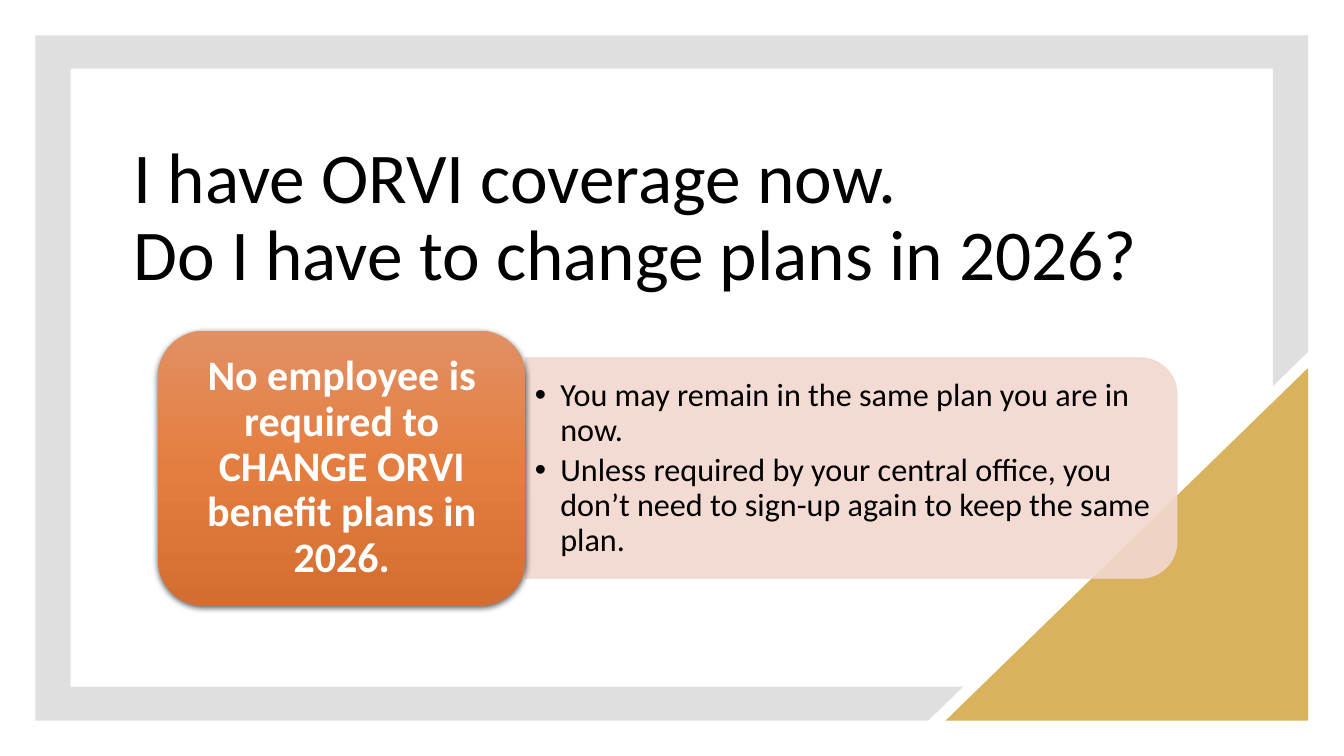
from copy import deepcopy
from dataclasses import dataclass

from lxml import etree
from pptx import Presentation
from pptx.dml.color import RGBColor
from pptx.enum.shapes import MSO_SHAPE
from pptx.enum.text import MSO_ANCHOR, MSO_AUTO_SIZE, PP_ALIGN
from pptx.oxml.ns import qn
from pptx.util import Cm, Pt

LEFT, CENTER = PP_ALIGN.LEFT, PP_ALIGN.CENTER
MIDDLE, NO_AUTOFIT = MSO_ANCHOR.MIDDLE, MSO_AUTO_SIZE.NONE
TRIANGLE = MSO_SHAPE.RIGHT_TRIANGLE
ROUNDED, ROUNDED_TOP = MSO_SHAPE.ROUNDED_RECTANGLE, MSO_SHAPE.ROUND_2_SAME_RECTANGLE


@dataclass(frozen=True)
class Theme:
    font: str = "Calibri"
    title_size: int = 51
    card_size: int = 30
    bullet_size: int = 23
    ink: RGBColor = RGBColor(0, 0, 0)
    white: RGBColor = RGBColor(255, 255, 255)
    frame: RGBColor = RGBColor.from_string("808080")
    gold: RGBColor = RGBColor.from_string("D8B25C")
    blush: RGBColor = RGBColor.from_string("F2D8CF")
    orange: tuple = ((0, "E28F63"), (0.5, "E47E40"), (1, "D46E30"))


THEME = Theme()


def write(frame, text, size, color, bold=False, align=LEFT, after=0, bullet=False, insets=(0.25, 0.13)):
    """Fill a text frame, one paragraph per line of text."""
    frame.word_wrap = True
    frame.auto_size = NO_AUTOFIT
    frame.vertical_anchor = MIDDLE
    frame.margin_left = frame.margin_right = Cm(insets[0])
    frame.margin_top = frame.margin_bottom = Cm(insets[1])
    for number, line in enumerate(text.split("\n")):
        paragraph = frame.add_paragraph() if number else frame.paragraphs[0]
        paragraph.text = line
        paragraph.alignment = align
        paragraph.line_spacing = 0.9
        paragraph.space_before, paragraph.space_after = Pt(0), Pt(after)
        for run in paragraph.runs:
            run.font.name, run.font.size, run.font.bold = THEME.font, Pt(size), bold
            run.font.color.rgb = color
        if bullet:
            properties = paragraph._p.get_or_add_pPr()
            properties.set("marL", str(Cm(0.64)))
            properties.set("indent", str(Cm(-0.64)))
            etree.SubElement(properties, qn("a:buFont"), typeface="Arial")
            etree.SubElement(properties, qn("a:buChar"), char="•")


def set_opacity(shape, percent):
    for color in shape._element.spPr.iter(qn("a:srgbClr")):
        etree.SubElement(color, qn("a:alpha"), val=str(percent * 1000))


presentation = Presentation()
presentation.slide_width, presentation.slide_height = Cm(33.87), Cm(19.05)
slide = presentation.slides.add_slide(presentation.slide_layouts[5])
shapes = slide.shapes

# Grey frame, cut off diagonally at the lower right
frame_points = [(0.89, 0.89), (32.97, 0.89), (32.97, 8.86), (32.08, 9.73), (32.08, 1.73),
                (1.78, 1.73), (1.78, 17.3), (24.28, 17.3), (23.39, 18.16), (0.89, 18.16)]
outline = [(Cm(x), Cm(y)) for x, y in frame_points]
builder = shapes.build_freeform(*outline[0])
builder.add_line_segments(outline[1:])
border = builder.convert_to_shape()
border.shadow.inherit = False
border.fill.solid()
border.fill.fore_color.rgb = THEME.frame
border.line.fill.background()
set_opacity(border, 25)

# Gold corner
corner = shapes.add_shape(TRIANGLE, Cm(23.83), Cm(9.27), Cm(9.14), Cm(8.89))
corner._element.spPr.get_or_add_xfrm().set("flipH", "1")
corner.shadow.inherit = False
corner.fill.solid()
corner.fill.fore_color.rgb = THEME.gold
corner.line.fill.background()

# Title
title = shapes.title
title.left, title.top, title.width, title.height = Cm(3.12), Cm(3.3), Cm(27.74), Cm(4.45)
write(title.text_frame, "I have ORVI coverage now.\vDo I have to change plans in 2026?",
      size=THEME.title_size, color=THEME.ink)

# Answer panel, turned so that its round corners face right
panel = shapes.add_shape(ROUNDED_TOP, Cm(18.67), Cm(3.58), Cm(5.56), Cm(16.43))
panel.rotation = 90
panel.shadow.inherit = False
panel.fill.solid()
panel.fill.fore_color.rgb = THEME.blush
panel.line.color.rgb = THEME.blush
panel.line.width = Pt(0.5)
set_opacity(panel, 90)

details = shapes.add_textbox(Cm(13.23), Cm(9.3), Cm(16.15), Cm(5))
write(details.text_frame,
      "You may remain in the same plan you are in now.\n"
      "Unless required by your central office, you don’t need to sign-up again to keep the same plan.",
      size=THEME.bullet_size, color=THEME.ink, after=4, bullet=True)

# Orange answer card
card = shapes.add_shape(ROUNDED, Cm(3.99), Cm(8.33), Cm(9.25), Cm(6.93))
card.fill.gradient()
card.fill.gradient_angle = 270
stop_list = card._element.spPr.find(qn("a:gradFill")).find(qn("a:gsLst"))
stop_list.append(deepcopy(stop_list[-1]))
for stop, (position, color) in zip(card.fill.gradient_stops, THEME.orange):
    stop.position = position
    stop.color.rgb = RGBColor.from_string(color)
card.line.fill.background()
card.shadow.inherit = False
effects = card._element.spPr.find(qn("a:effectLst"))
shadow = etree.SubElement(effects, qn("a:outerShdw"), blurRad=str(Pt(4.5)), dist=str(Pt(1.5)),
                          dir="5400000", rotWithShape="0")
shadow_color = etree.SubElement(shadow, qn("a:srgbClr"), val=str(THEME.ink))
etree.SubElement(shadow_color, qn("a:alpha"), val="63000")
write(card.text_frame, "No employee is required to CHANGE ORVI benefit plans in 2026.",
      size=THEME.card_size, color=THEME.white, bold=True, align=CENTER, insets=(0.3, 0.15))

presentation.save("out.pptx")
